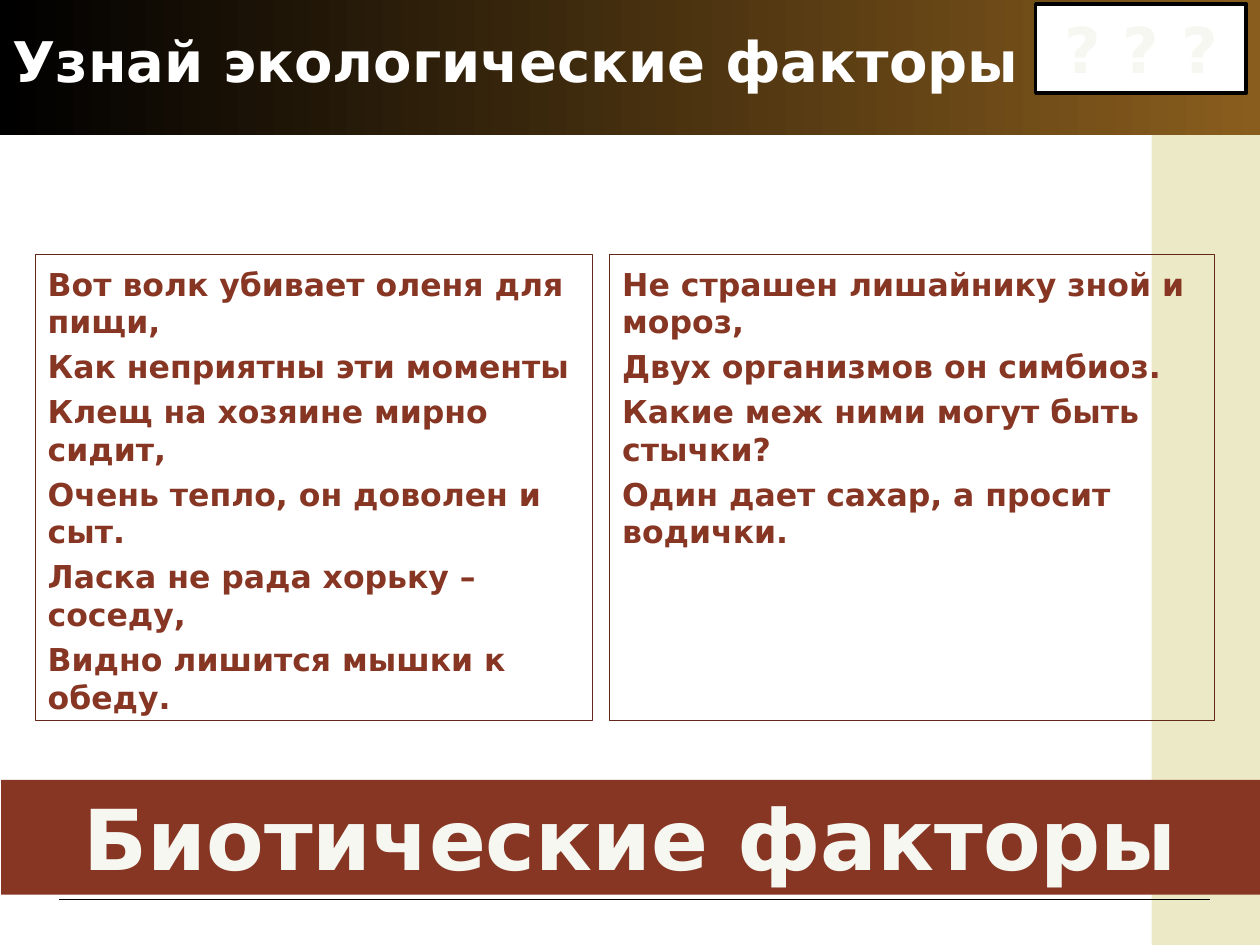
from pptx import Presentation
from pptx.dml.color import RGBColor
from pptx.enum.shapes import MSO_CONNECTOR, MSO_SHAPE
from pptx.enum.text import MSO_ANCHOR, PP_ALIGN
from pptx.oxml.ns import qn
from pptx.util import Inches, Pt
from lxml.etree import SubElement

FONT = "DejaVu Sans"
COLORS = {
    "black": "000000",
    "white": "FFFFFF",
    "gold": "895D1D",
    "sand": "ECE9C6",
    "brick": "873624",
    "frame": "64281B",
    "ivory": "F6F7F1",
}
WOLF_VERSE = [
    "Вот волк убивает оленя для пищи,",
    "Как неприятны эти моменты",
    "Клещ на хозяине мирно сидит,",
    "Очень тепло, он доволен и сыт.",
    "Ласка не рада хорьку – соседу,",
    "Видно лишится мышки к обеду.",
]
LICHEN_VERSE = [
    "Не страшен лишайнику зной и мороз,",
    "Двух организмов он симбиоз.",
    "Какие меж ними могут быть стычки?",
    "Один дает сахар, а просит водички.",
]


def color(name):
    return RGBColor.from_string(COLORS[name])


def add_panel(slide, left, top, width, height, fill=None, line=None, line_width=0.75):
    panel = slide.shapes.add_shape(
        MSO_SHAPE.RECTANGLE, Inches(left), Inches(top), Inches(width), Inches(height))
    panel.shadow.inherit = False
    if fill:
        panel.fill.solid()
        panel.fill.fore_color.rgb = color(fill)
    else:
        panel.fill.background()
    if line:
        panel.line.color.rgb = color(line)
        panel.line.width = Pt(line_width)
    else:
        panel.line.fill.background()
    return panel


def write_text(shape, lines, size, text_color, align=PP_ALIGN.LEFT,
               anchor=MSO_ANCHOR.MIDDLE, gap=0):
    frame = shape.text_frame
    frame.word_wrap = True
    frame.vertical_anchor = anchor
    for index, line in enumerate(lines):
        paragraph = frame.add_paragraph() if index else frame.paragraphs[0]
        paragraph.text = line
        paragraph.alignment = align
        if index:
            paragraph.space_before = Pt(gap)
        font = paragraph.font
        font.name, font.size, font.bold = FONT, Pt(size), True
        font.color.rgb = color(text_color)


def add_verse(slide, left, width, lines):
    verse = add_panel(slide, left, 2.02, width, 3.7, line="frame")
    verse.text_frame.margin_top = Inches(0.08)
    write_text(verse, lines, 18, "brick", anchor=MSO_ANCHOR.TOP, gap=4)


def add_rule(slide, left, right, y):
    rule = slide.shapes.add_connector(
        MSO_CONNECTOR.STRAIGHT, Inches(left), Inches(y), Inches(right), Inches(y))
    rule.line.color.rgb = color("black")
    rule.line.width = Pt(0.75)
    SubElement(rule._element.spPr, qn("a:effectLst"))


def add_header(slide):
    band = add_panel(slide, 0, 0, 10, 1.07)
    band.fill.gradient()
    band.fill.gradient_angle = 0
    for stop, name, position in zip(band.fill.gradient_stops, ("black", "gold"), (0, 1)):
        stop.color.rgb = color(name)
        stop.position = position
    title = slide.shapes.add_textbox(0, 0, Inches(8.32), Inches(0.96))
    write_text(title, ["Узнай экологические факторы"], 32, "white")


def main():
    presentation = Presentation()
    presentation.slide_width, presentation.slide_height = Inches(10), Inches(7.5)
    slide = presentation.slides.add_slide(presentation.slide_layouts[6])

    # Backdrop and heading
    add_panel(slide, 9.14, 1.07, 0.86, 6.43, fill="sand")
    add_rule(slide, 0.47, 9.6, 7.14)
    add_header(slide)

    # Riddles
    add_verse(slide, 0.28, 4.42, WOLF_VERSE)
    add_verse(slide, 4.84, 4.8, LICHEN_VERSE)

    # Question button and answer
    question = add_panel(slide, 8.22, 0.03, 1.67, 0.71, "white", "black", 2)
    write_text(question, ["? ? ?"], 36, "ivory", PP_ALIGN.CENTER)
    answer = add_panel(slide, 0.01, 6.19, 9.99, 0.91, "brick")
    write_text(answer, ["Биотические факторы"], 48, "ivory", PP_ALIGN.CENTER)

    presentation.save("out.pptx")


if __name__ == "__main__":
    main()
